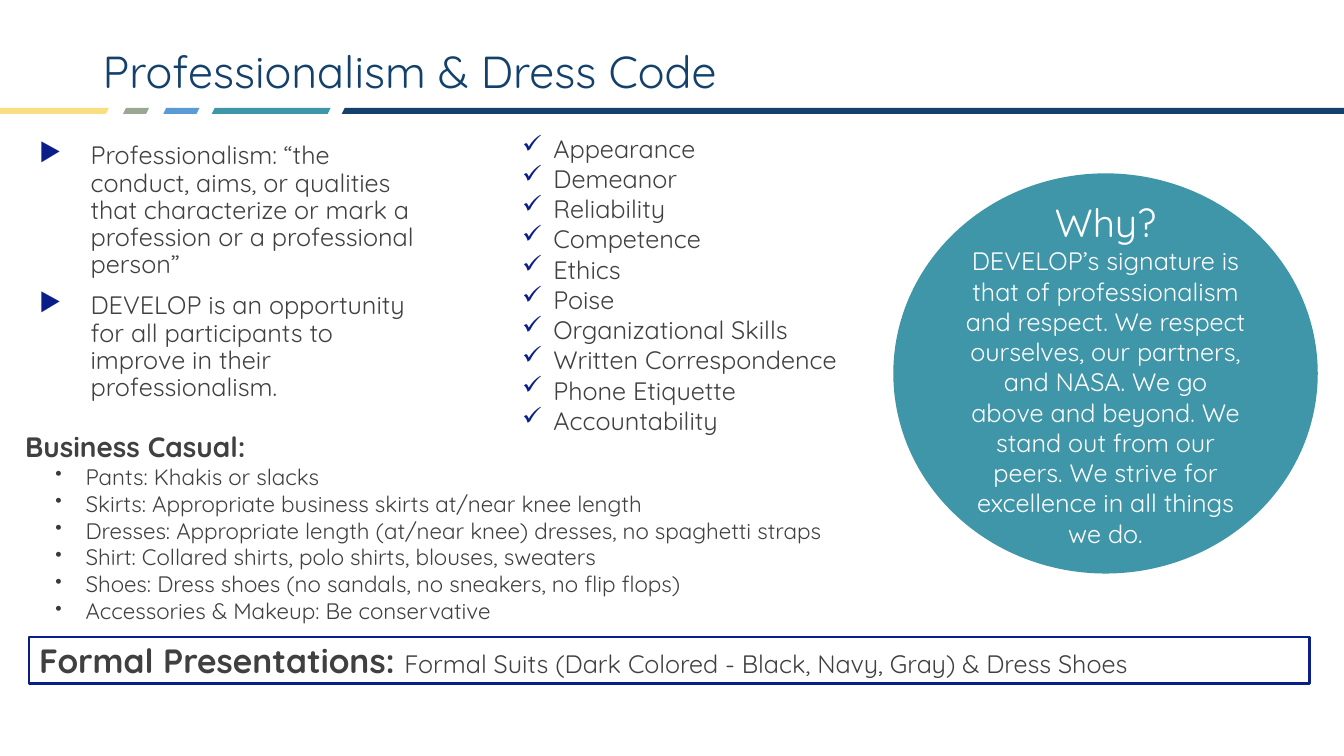
from pptx import Presentation
from pptx import util as u
from pptx.dml.color import RGBColor
from pptx.enum import shapes, text
from pptx.oxml.ns import qn
from lxml import etree

PX = 9144  # 100 px to the inch
FONT = "Quicksand"
NAVY, TEAL, BLUE = "13416C", "3E96A8", "0A1E8A"
GRAY, DARK, WHITE = "404040", "3B3838", "FFFFFF"

BANDS = [(-4, 112, "FADF82"), (122, 26, "99A893"), (162, 36, "5B9BD5"),
         (210, 118, TEAL), (339, 998, NAVY)]
GOALS = [
    "Professionalism: “the conduct, aims, or qualities that characterize "
    "or mark a profession or a professional person”",
    "DEVELOP is an opportunity for all participants to improve in their "
    "professionalism.",
]
TRAITS = ["Appearance", "Demeanor", "Reliability", "Competence", "Ethics",
          "Poise", "Organizational Skills", "Written Correspondence",
          "Phone Etiquette", "Accountability"]
CASUAL = [
    "Pants: Khakis or slacks",
    "Skirts: Appropriate business skirts at/near knee length",
    "Dresses: Appropriate length (at/near knee) dresses, no spaghetti straps",
    "Shirt: Collared shirts, polo shirts, blouses, sweaters",
    "Shoes: Dress shoes (no sandals, no sneakers, no flip flops)",
    "Accessories & Makeup: Be conservative",
]
WHY = ("DEVELOP’s signature is that of professionalism and respect. We respect "
       "ourselves, our partners, and NASA. We go above and beyond. We stand "
       "out from our peers. We strive for excellence in all things we do.")


def color(code):
    return RGBColor.from_string(code)


def place(box):
    return [u.Emu(n * PX) for n in box]


def add_shape(slide, kind, box, fill=None, line=None):
    shape = slide.shapes.add_shape(kind, *place(box))
    shape.shadow.inherit = False
    if fill:
        shape.fill.solid()
        shape.fill.fore_color.rgb = color(fill)
    else:
        shape.fill.background()
    if line:
        shape.line.color.rgb = color(line)
        shape.line.width = u.Pt(1.75)
    else:
        shape.line.fill.background()
    return shape


def set_frame(shape, anchor):
    frame = shape.text_frame
    frame.word_wrap = True
    frame.vertical_anchor = anchor
    return frame


def add_box(slide, box, anchor=text.MSO_ANCHOR.TOP):
    return set_frame(slide.shapes.add_textbox(*place(box)), anchor)


def add_para(frame, align=text.PP_ALIGN.LEFT):
    """Use the empty first paragraph, or append one."""
    first = frame.paragraphs[0]
    para = first if not first.runs else frame.add_paragraph()
    para.alignment = align
    return para


def add_run(para, words, size, tint=GRAY, bold=False):
    run = para.add_run()
    run.text = words
    font = run.font
    font.name, font.size, font.bold = FONT, u.Pt(size), bold
    font.color.rgb = color(tint)


def set_bullet(para, mark, tint, left, hang, scale=100):
    props = para._p.get_or_add_pPr()
    props.set("marL", str(left * PX))
    props.set("indent", str(-hang * PX))
    tone = etree.SubElement(props, qn("a:buClr"))
    etree.SubElement(tone, qn("a:srgbClr"), val=tint)
    etree.SubElement(props, qn("a:buSzPct"), val=str(scale * 1000))
    etree.SubElement(props, qn("a:buChar"), char=mark)


def add_list(frame, items, size, bullet, space=None, gap=0):
    for item in items:
        para = add_para(frame)
        set_bullet(para, *bullet)
        if space:
            para.line_spacing = space
        if gap and item != items[0]:
            para.space_before = u.Pt(gap)
        add_run(para, item, size)


def add_head(slide):
    for left, width, fill in BANDS:
        band = add_shape(slide, shapes.MSO_SHAPE.PARALLELOGRAM,
                         (left, 107, width, 6), fill)
        band.adjustments[0] = 0.5
    frame = add_box(slide, (92, 40, 1150, 67), text.MSO_ANCHOR.MIDDLE)
    para = add_para(frame)
    para.line_spacing = 0.9
    add_run(para, "Professionalism & Dress Code", 32, NAVY)


def add_why(slide):
    oval = add_shape(slide, shapes.MSO_SHAPE.OVAL, (886, 172, 421, 397), TEAL)
    frame = set_frame(oval, text.MSO_ANCHOR.MIDDLE)
    for words, size in (("Why?", 28), (WHY, 18)):
        add_run(add_para(frame, text.PP_ALIGN.CENTER), words, size, WHITE)


def add_formal(slide):
    bar = add_shape(slide, shapes.MSO_SHAPE.RECTANGLE, (29, 632, 1270, 46),
                    line=BLUE)
    para = add_para(set_frame(bar, text.MSO_ANCHOR.MIDDLE))
    add_run(para, "Formal Presentations: ", 24, bold=True)
    add_run(para, "Formal Suits (Dark Colored - Black, Navy, Gray) & Dress Shoes",
            18)


def main():
    deck = Presentation()
    deck.slide_width, deck.slide_height = place((1333, 750))
    slide = deck.slides.add_slide(deck.slide_layouts[6])

    add_head(slide)
    casual = add_box(slide, (15, 421, 1041, 210))
    add_run(add_para(casual), "Business Casual:", 20, bold=True)
    add_list(casual, CASUAL, 16, ("•", DARK, 60, 30, 85))
    add_why(slide)
    add_formal(slide)
    add_list(add_box(slide, (29, 137, 398, 294)), GOALS, 18,
             ("▶", BLUE, 51, 51), space=0.9, gap=10)
    add_list(add_box(slide, (508, 127, 359, 313)), TRAITS, 18,
             ("✓", BLUE, 31, 31))

    deck.save("out.pptx")


if __name__ == "__main__":
    main()
